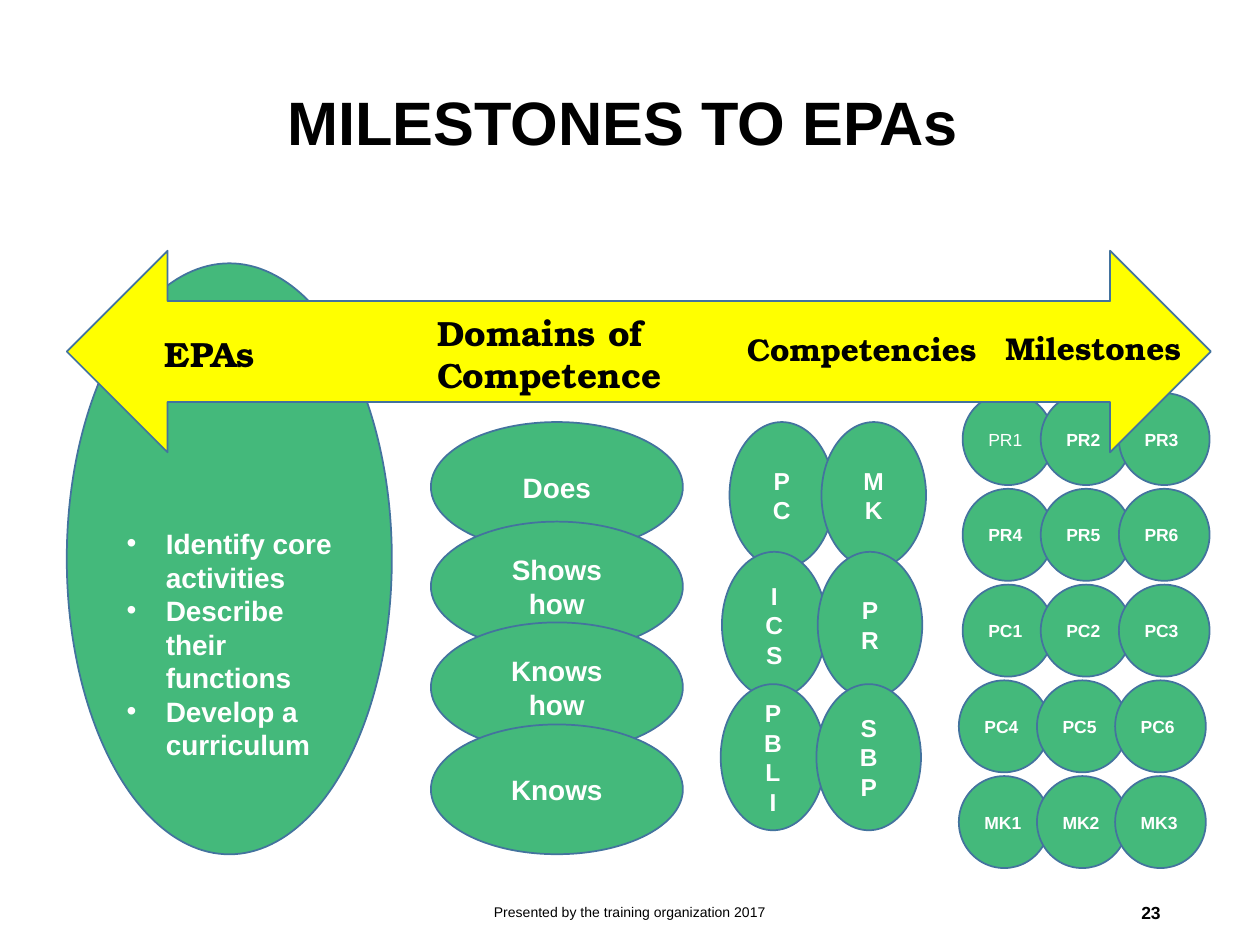
from lxml import etree
from pptx import Presentation
from pptx.dml.color import RGBColor
from pptx.enum.shapes import MSO_SHAPE
from pptx.enum.text import MSO_ANCHOR, PP_ALIGN
from pptx.oxml.ns import qn
from pptx.util import Inches, Pt

OVAL, ARROW = MSO_SHAPE.OVAL, MSO_SHAPE.LEFT_RIGHT_ARROW
LEFT, CENTER, RIGHT = PP_ALIGN.LEFT, PP_ALIGN.CENTER, PP_ALIGN.RIGHT
TOP, MIDDLE, BOTTOM = MSO_ANCHOR.TOP, MSO_ANCHOR.MIDDLE, MSO_ANCHOR.BOTTOM
COLORS = {"green": "44B97B", "outline": "43739E", "yellow": "FFFF00",
          "white": "FFFFFF", "black": "000000"}
SANS, SERIF = "Arial", "TeX Gyre Bonum"


def rgb(name):
    return RGBColor.from_string(COLORS[name])


def add_bullet(para, indent=0.31):
    properties = para._p.get_or_add_pPr()
    properties.set("marL", str(Inches(indent)))
    properties.set("indent", str(-Inches(indent)))
    etree.SubElement(properties, qn("a:buFont")).set("typeface", SANS)
    etree.SubElement(properties, qn("a:buChar")).set("char", "•")


def write(box, lines, size=16, font=SANS, color="white", bold=True,
          align=LEFT, anchor=MIDDLE, wrap=True, bullets=False, spacing=None):
    frame = box.text_frame
    frame.word_wrap = wrap
    frame.vertical_anchor = anchor
    for index, line in enumerate(lines):
        para = frame.add_paragraph() if index else frame.paragraphs[0]
        para.alignment = align
        if spacing:
            para.line_spacing = spacing
        if bullets:
            add_bullet(para)
        span = para.add_run()
        span.text = line
        span.font.name = font
        span.font.size = Pt(size)
        span.font.bold = bold
        span.font.color.rgb = rgb(color)


def add_figure(page, kind, left, top, width, height, fill="green"):
    shape = page.shapes.add_shape(kind, Inches(left), Inches(top),
                                  Inches(width), Inches(height))
    shape.shadow.inherit = False
    shape.fill.solid()
    shape.fill.fore_color.rgb = rgb(fill)
    shape.line.color.rgb = rgb("outline")
    shape.line.width = Pt(1)
    return shape


def add_label(page, lines, left, top, width, height, **text_format):
    box = page.shapes.add_textbox(Inches(left), Inches(top),
                                  Inches(width), Inches(height))
    write(box, lines, color="black", **text_format)


def add_title(page, text):
    title = page.shapes.title
    title.left, title.top = Inches(2.18), Inches(0.27)
    title.width, title.height = Inches(7.14), Inches(1.45)
    write(title, [text], size=35, color="black", spacing=0.9)


def add_domains(page):
    tops = [3.35, 4.14, 4.94, 5.75]
    for top, name in zip(tops, ["Does", "Shows how", "Knows how", "Knows"]):
        write(add_figure(page, OVAL, 3.42, top, 2, 1.03), [name], align=CENTER)


def add_competencies(page):
    rows = [(3.35, {"PC": 5.79, "MK": 6.52}),
            (4.38, {"ICS": 5.73, "PR": 6.49}),
            (5.43, {"PBLI": 5.72, "SBP": 6.48})]
    for top, ovals in rows:
        for letters, left in ovals.items():
            oval = add_figure(page, OVAL, left, top, 0.83, 1.16)
            write(oval, list(letters), size=14, align=CENTER)


def add_milestones(page):
    names = [f"{group}{number}" for group, count in (("PR", 6), ("PC", 6), ("MK", 3))
             for number in range(1, count + 1)]
    for index, name in enumerate(names):
        row, column = divmod(index, 3)
        left = (7.64 if row < 3 else 7.61) + 0.62 * column
        circle = add_figure(page, OVAL, left, 3.12 + 0.76 * row, 0.72, 0.73)
        write(circle, [name], size=10, bold=name != "PR1")


def add_arrow(page):
    add_figure(page, ARROW, 0.53, 1.99, 9.08, 1.6, fill="yellow")
    labels = [(["EPAs"], 1.21, 2.59, 0.94, 0.44, 20),
              (["Domains of", "Competence"], 3.37, 2.42, 2.01, 0.77, 20),
              (["Competencies"], 5.83, 2.57, 2.06, 0.4, 18),
              (["Milestones"], 7.88, 2.56, 1.62, 0.4, 18)]
    for lines, left, top, width, height, size in labels:
        add_label(page, lines, left, top, width, height, size=size,
                  font=SERIF, anchor=TOP, wrap=False)


def main():
    deck = Presentation()
    deck.slide_width, deck.slide_height = Inches(10), Inches(7.5)
    page = deck.slides.add_slide(deck.slide_layouts[5])
    add_title(page, "MILESTONES TO EPAs")

    # Columns, from broad activities to single milestones
    activities = add_figure(page, OVAL, 0.53, 2.09, 2.58, 4.69)
    write(activities, ["Identify core activities", "Describe their functions",
                       "Develop a curriculum"], anchor=BOTTOM, bullets=True)
    add_domains(page)
    add_competencies(page)
    add_milestones(page)

    # Heading arrow across the columns
    add_arrow(page)

    # Footer
    add_label(page, ["Presented by the training organization 2017"],
              3.31, 7.04, 3.38, 0.4, size=8, bold=False, align=CENTER)
    add_label(page, ["23"], 7.06, 7.04, 2.25, 0.4, size=10, align=RIGHT)
    deck.save("out.pptx")


if __name__ == "__main__":
    main()
